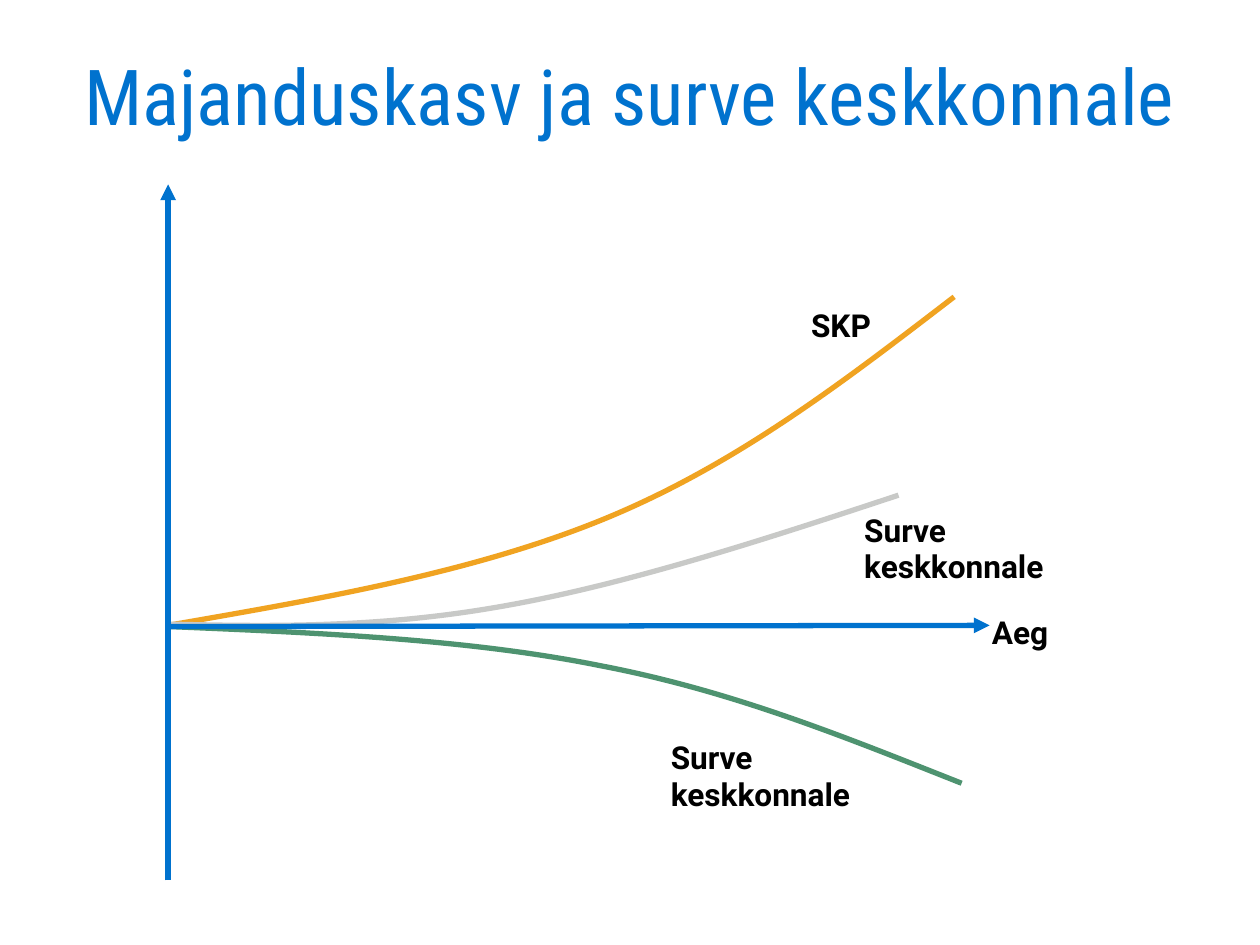
from dataclasses import dataclass

from lxml import etree
from pptx import Presentation
from pptx.dml.color import RGBColor
from pptx.enum import shapes, text
from pptx.oxml import ns
from pptx.slide import Slide
from pptx.util import Pt

COLORS = {
    "blue": "0072CE",
    "orange": "F0A321",
    "grey": "C8C9C7",
    "green": "4E9370",
    "black": "000000",
}
LINE_WIDTH = 3
Point = tuple[float, float]


@dataclass
class Curve:
    color: str
    points: list[Point]


@dataclass
class Label:
    lines: str
    left: float
    top: float
    width: float
    height: float
    font: str = "Roboto"
    size: float = 18
    color: str = "black"
    bold: bool = True
    spacing: float = 0.97
    anchor: text.MSO_ANCHOR = text.MSO_ANCHOR.TOP


@dataclass
class Axis:
    start: Point
    end: Point


CURVES = [
    Curve("orange", [(95.8, 356.4), (182.9, 341.3), (270.7, 326.2), (345.6, 295.2),
                     (420.5, 264.2), (481.7, 216.7), (543.6, 169.2)]),
    Curve("grey", [(95.8, 355.7), (156.2, 357.1), (216.7, 357.8), (285.8, 345.6),
                   (355.7, 333.4), (433.4, 308.2), (511.9, 282.2)]),
    Curve("green", [(96.5, 357.1), (181.4, 360.7), (267.1, 364.3), (342, 379.4),
                    (417.6, 393.8), (482.4, 420.5), (547.9, 446.4)]),
]
LABELS = [
    Label("SKP", 455, 172.1, 56.9, 33.1),
    Label("Surve\nkeskkonnale", 485.3, 288.7, 137.5, 57.6),
    Label("Surve\nkeskkonnale", 375.1, 418.3, 137.5, 57.6),
    Label("Aeg", 558, 347, 54.7, 33.1),
    Label("Majanduskasv ja surve keskkonnale", 41, 26.6, 653, 61.2, "Roboto Condensed",
          44, "blue", False, 0.9, text.MSO_ANCHOR.MIDDLE),
]
AXES = [
    Axis((95.8, 357.1), (563.8, 356.4)),
    Axis((95.8, 501.8), (95.8, 105.1)),
]


def rgb(name: str) -> RGBColor:
    return RGBColor.from_string(COLORS[name])


def draw_curve(slide: Slide, curve: Curve) -> None:
    start, *rest = [(Pt(x), Pt(y)) for x, y in curve.points]
    builder = slide.shapes.build_freeform(*start, scale=1.0)
    builder.add_line_segments(rest, close=False)
    growth = builder.convert_to_shape()
    growth.shadow.inherit = False
    growth.fill.background()
    growth.line.color.rgb = rgb(curve.color)
    growth.line.width = Pt(LINE_WIDTH)

    segments = growth._element.findall(".//" + ns.qn("a:lnTo"))
    outline = segments[0].getparent()
    for first in range(0, len(segments), 3):
        bezier = etree.SubElement(outline, ns.qn("a:cubicBezTo"))
        for segment in segments[first:first + 3]:
            bezier.append(segment[0])
            outline.remove(segment)


def draw_label(slide: Slide, label: Label) -> None:
    caption = slide.shapes.add_textbox(
        Pt(label.left), Pt(label.top), Pt(label.width), Pt(label.height))
    frame = caption.text_frame
    frame.word_wrap = True
    frame.vertical_anchor = label.anchor
    frame.text = label.lines
    for paragraph in frame.paragraphs:
        paragraph.line_spacing = label.spacing
        for run in paragraph.runs:
            run.font.name = label.font
            run.font.size = Pt(label.size)
            run.font.bold = label.bold
            run.font.color.rgb = rgb(label.color)


def draw_axis(slide: Slide, axis: Axis) -> None:
    arrow = slide.shapes.add_connector(
        shapes.MSO_CONNECTOR.STRAIGHT,
        *(Pt(value) for value in axis.start + axis.end))
    arrow.line.color.rgb = rgb("blue")
    arrow.line.width = Pt(LINE_WIDTH)
    etree.SubElement(arrow.line._get_or_add_ln(), ns.qn("a:tailEnd"), type="triangle")
    etree.SubElement(arrow._element.spPr, ns.qn("a:effectLst"))


def main() -> None:
    deck = Presentation()
    deck.slide_width, deck.slide_height = Pt(717.84), Pt(538.56)
    slide = deck.slides.add_slide(deck.slide_layouts[6])
    for curve in CURVES:
        draw_curve(slide, curve)
    for label in LABELS:
        draw_label(slide, label)
    for axis in AXES:
        draw_axis(slide, axis)
    deck.save("out.pptx")


if __name__ == "__main__":
    main()
